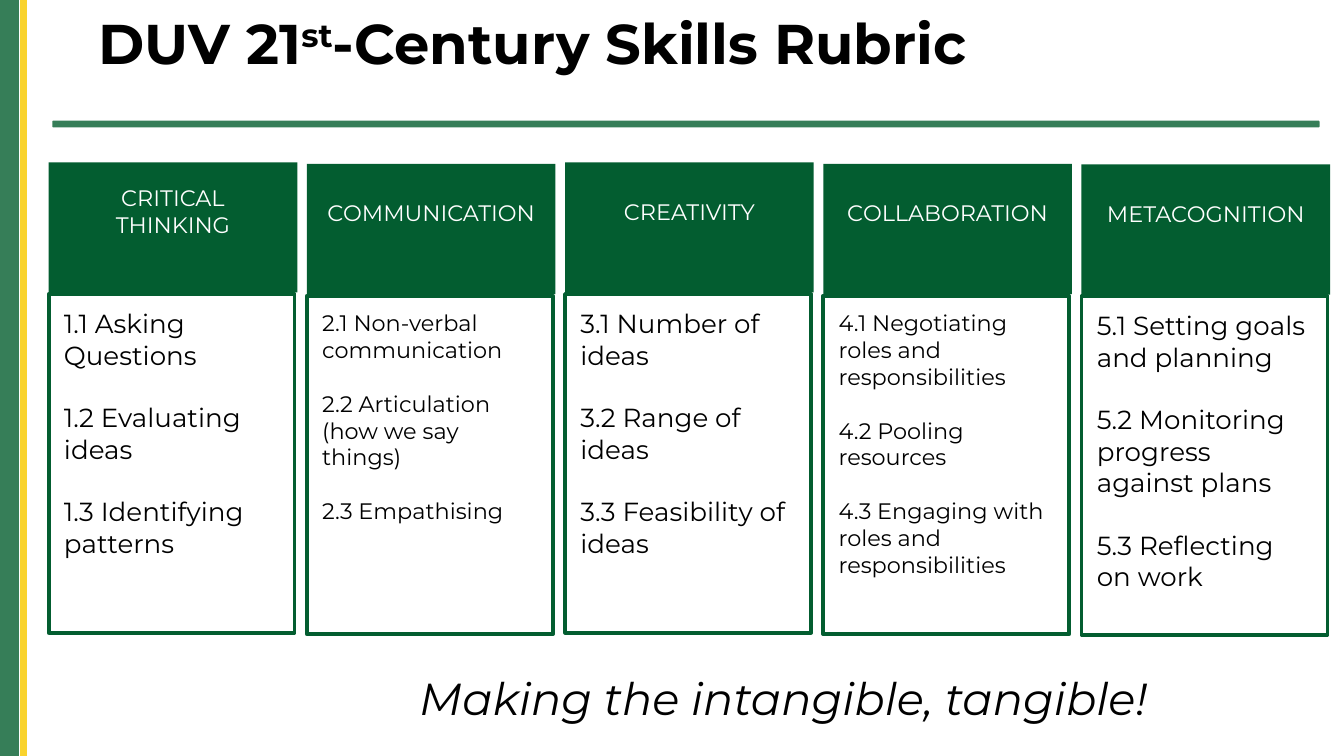
import pptx
import pptx.util
import pptx.dml.color
import pptx.enum.shapes
import pptx.enum.text

Cm = pptx.util.Cm
Pt = pptx.util.Pt
RGB = pptx.dml.color.RGBColor
KIND = pptx.enum.shapes.MSO_SHAPE
ALIGN = pptx.enum.text.PP_ALIGN
ANCHOR = pptx.enum.text.MSO_ANCHOR
FIT = pptx.enum.text.MSO_AUTO_SIZE

FOREST = RGB(0x03, 0x5D, 0x30)
GREEN = RGB(0x36, 0x7E, 0x58)
YELLOW = RGB(0xF9, 0xD3, 0x2E)
WHITE = RGB(0xFF, 0xFF, 0xFF)
BLACK = RGB(0, 0, 0)

LEFT, PITCH = 0.92, 4.88
SKILLS = [
    ("CRITICAL THINKING", 3.07, 14,
     ["1.1 Asking Questions", "1.2 Evaluating ideas",
      "1.3 Identifying patterns"]),
    ("COMMUNICATION", 3.1, 12,
     ["2.1 Non-verbal communication", "2.2 Articulation (how we say things)",
      "2.3 Empathising"]),
    ("CREATIVITY", 3.07, 14,
     ["3.1 Number of ideas", "3.2 Range of ideas",
      "3.3 Feasibility of ideas"]),
    ("COLLABORATION", 3.1, 12,
     ["4.1 Negotiating roles and responsibilities", "4.2 Pooling resources",
      "4.3 Engaging with roles and responsibilities"]),
    ("METACOGNITION", 3.11, 14,
     ["5.1 Setting goals and planning",
      "5.2 Monitoring progress against plans", "5.3 Reflecting on work"]),
]


def place(item, left, top, width, height):
    item.left, item.top = Cm(left), Cm(top)
    item.width, item.height = Cm(width), Cm(height)


def style(para, size, color=BLACK, align=ALIGN.LEFT):
    para.alignment = align
    font = para.font
    font.name, font.size = "Montserrat", Pt(size)
    font.color.rgb = color
    return font


def add_box(slide, area, fill=None, line=None, kind=KIND.RECTANGLE):
    box = slide.shapes.add_shape(kind, *map(Cm, area))
    box.shadow.inherit = False
    if fill is None:
        box.fill.background()
    else:
        box.fill.solid()
        box.fill.fore_color.rgb = fill
    if line is None:
        box.line.fill.background()
    else:
        box.line.color.rgb = line
        box.line.width = Pt(2)
    return box


def add_text(slide, area, lines, size, align=ALIGN.LEFT):
    frame = slide.shapes.add_textbox(*map(Cm, area)).text_frame
    frame.word_wrap = True
    frame.text = "\n".join(lines)
    for spot, para in enumerate(frame.paragraphs):
        style(para, size, align=align)
        if spot:
            para.space_before = Pt(size * 1.2)
    return frame


def add_trim(slide):
    add_box(slide, (0, 0, 0.36, 14.29), GREEN)
    add_box(slide, (0.38, 0, 0.13, 14.29), YELLOW)
    rule = add_box(slide, (0.99, 2.28, 23.95, 0.13), GREEN,
                   kind=KIND.ROUNDED_RECTANGLE)
    rule.adjustments[0] = 0.17


def add_title(slide):
    title = slide.shapes.title
    place(title, 1.04, 0.2, 24.03, 1.73)
    frame = title.text_frame
    frame.auto_size = FIT.NONE
    frame.vertical_anchor = ANCHOR.TOP
    frame.margin_left = Cm(0.82)
    frame.margin_top = Cm(0.1)
    para = frame.paragraphs[0]
    para.line_spacing = 0.9
    for text in ("DUV 21", "st", "-Century Skills Rubric"):
        run = para.add_run()
        run.text = text
        if text == "st":
            run._r.get_or_add_rPr().set("baseline", "30000")
    style(para, 30).bold = True


def add_skill(slide, left, name, top, size, items):
    head = add_box(slide, (left, top, 4.7, 2.46), FOREST)
    frame = head.text_frame
    frame.word_wrap = True
    frame.vertical_anchor = ANCHOR.MIDDLE
    frame.margin_bottom = Cm(0.73)
    frame.text = name
    style(frame.paragraphs[0], 12, WHITE, ALIGN.CENTER)
    add_box(slide, (left, top + 2.49, 4.65, 6.4), line=FOREST)
    add_text(slide, (left + 0.04, top + 2.62, 4.57, 5.4), items, size)


def main():
    deck = pptx.Presentation()
    deck.slide_width, deck.slide_height = Cm(25.4), Cm(14.29)
    slide = deck.slides.add_slide(deck.slide_layouts[5])
    add_trim(slide)
    add_title(slide)
    for spot, skill in enumerate(SKILLS):
        add_skill(slide, LEFT + spot * PITCH, *skill)
    motto = add_text(slide, (6.32, 12.55, 16.97, 1.27),
                     ["Making the intangible, tangible!"], 24, ALIGN.CENTER)
    motto.paragraphs[0].font.italic = True
    deck.save("out.pptx")


if __name__ == "__main__":
    main()
